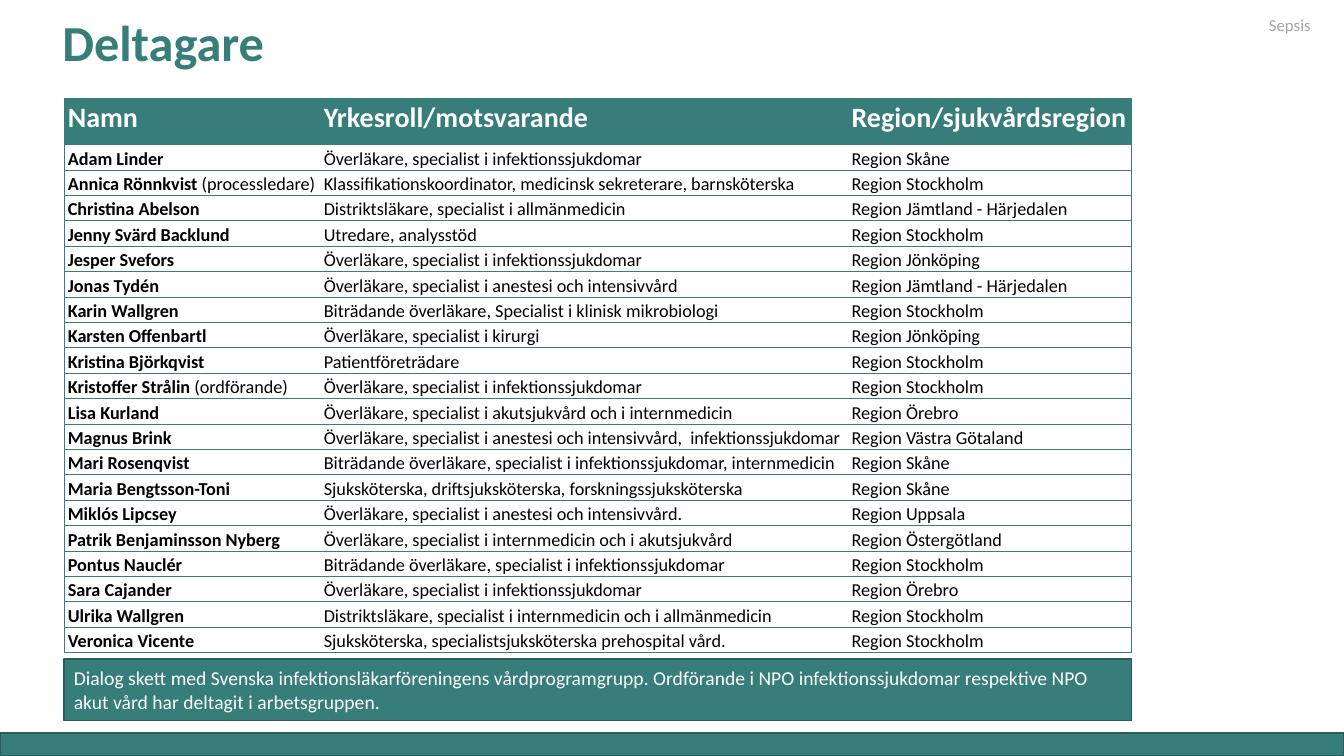
from lxml.etree import SubElement
from pptx import Presentation
from pptx.dml.color import RGBColor
from pptx.enum.shapes import MSO_SHAPE
from pptx.enum.text import MSO_ANCHOR, PP_ALIGN
from pptx.oxml.ns import qn
from pptx.util import Cm, Pt

TEAL = RGBColor(0x37, 0x7D, 0x7A)
DARK_TEAL = RGBColor(0x29, 0x5C, 0x5A)
BLACK = RGBColor(0, 0, 0)
WHITE = RGBColor(0xFF, 0xFF, 0xFF)
GREY = RGBColor(0xA6, 0xA6, 0xA6)
FONT = "Calibri"

HEADER = ("Namn", "Yrkesroll/motsvarande", "Region/sjukvårdsregion")
# name, role, region, optional assignment in the group
MEMBERS = [
    ("Adam Linder", "Överläkare, specialist i infektionssjukdomar", "Skåne"),
    ("Annica Rönnkvist", "Klassifikationskoordinator, medicinsk sekreterare, barnsköterska",
     "Stockholm", "processledare"),
    ("Christina Abelson", "Distriktsläkare, specialist i allmänmedicin", "Jämtland - Härjedalen"),
    ("Jenny Svärd Backlund", "Utredare, analysstöd", "Stockholm"),
    ("Jesper Svefors", "Överläkare, specialist i infektionssjukdomar", "Jönköping"),
    ("Jonas Tydén", "Överläkare, specialist i anestesi och intensivvård", "Jämtland - Härjedalen"),
    ("Karin Wallgren", "Biträdande överläkare, Specialist i klinisk mikrobiologi", "Stockholm"),
    ("Karsten Offenbartl", "Överläkare, specialist i kirurgi", "Jönköping"),
    ("Kristina Björkqvist", "Patientföreträdare", "Stockholm"),
    ("Kristoffer Strålin", "Överläkare, specialist i infektionssjukdomar", "Stockholm", "ordförande"),
    ("Lisa Kurland", "Överläkare, specialist i akutsjukvård och i internmedicin", "Örebro"),
    ("Magnus Brink", "Överläkare, specialist i anestesi och intensivvård,  infektionssjukdomar",
     "Västra Götaland"),
    ("Mari Rosenqvist", "Biträdande överläkare, specialist i infektionssjukdomar, internmedicin", "Skåne"),
    ("Maria Bengtsson-Toni", "Sjuksköterska, driftsjuksköterska, forskningssjuksköterska", "Skåne"),
    ("Miklós Lipcsey", "Överläkare, specialist i anestesi och intensivvård.", "Uppsala"),
    ("Patrik Benjaminsson Nyberg", "Överläkare, specialist i internmedicin och i akutsjukvård",
     "Östergötland"),
    ("Pontus Nauclér", "Biträdande överläkare, specialist i infektionssjukdomar", "Stockholm"),
    ("Sara Cajander", "Överläkare, specialist i infektionssjukdomar", "Örebro"),
    ("Ulrika Wallgren", "Distriktsläkare, specialist i internmedicin och i allmänmedicin", "Stockholm"),
    ("Veronica Vicente", "Sjuksköterska, specialistsjuksköterska prehospital vård.", "Stockholm"),
]
NOTE = ("Dialog skett med Svenska infektionsläkarföreningens vårdprogramgrupp. Ordförande i NPO "
        "infektionssjukdomar respektive NPO akut vård har deltagit i arbetsgruppen.")

LEFT, TABLE_TOP = 1.61, 2.48
COL_WIDTHS = (6.45, 13.3, 7.15)
HEADER_HEIGHT, ROW_HEIGHT = 1.16, 0.64


def write(tf, content, size=13, color=BLACK, bold=False, spacing=None):
    """Fill a text frame with a string or a list of (text, bold) runs."""
    p = tf.paragraphs[0]
    p.alignment = PP_ALIGN.LEFT
    p.line_spacing = spacing
    for text, is_bold in [(content, bold)] if isinstance(content, str) else content:
        r = p.add_run()
        r.text = text
        r.font.name, r.font.size, r.font.bold = FONT, Pt(size), is_bold
        r.font.color.rgb = color


def add_text(s, box, content, anchor=MSO_ANCHOR.TOP, **fmt):
    tf = s.shapes.add_textbox(*map(Cm, box)).text_frame
    tf.word_wrap = True
    tf.vertical_anchor = anchor
    write(tf, content, **fmt)


def add_panel(s, *box):
    sp = s.shapes.add_shape(MSO_SHAPE.RECTANGLE, *map(Cm, box))
    sp.shadow.inherit = False
    sp.fill.solid()
    sp.fill.fore_color.rgb = TEAL
    sp.line.color.rgb = DARK_TEAL
    sp.line.width = Pt(1)
    return sp


def set_borders(cell, visible):
    """Draw the named sides of a cell and clear the others."""
    tcPr = cell._tc.get_or_add_tcPr()
    for i, side in enumerate("LRTB"):
        ln = SubElement(tcPr, qn("a:ln" + side), w=str(Pt(0.5)))
        if side in visible:
            fill = SubElement(ln, qn("a:solidFill"))
            SubElement(fill, qn("a:srgbClr"), val=str(TEAL))
        else:
            SubElement(ln, qn("a:noFill"))
        tcPr.insert(i, ln)


def add_members_table(s):
    height = HEADER_HEIGHT + ROW_HEIGHT * len(MEMBERS)
    frame = s.shapes.add_table(len(MEMBERS) + 1, len(HEADER), Cm(LEFT), Cm(TABLE_TOP),
                               Cm(sum(COL_WIDTHS)), Cm(height))
    table = frame.table
    table.horz_banding = False
    for col, width in zip(table.columns, COL_WIDTHS):
        col.width = Cm(width)
    rows = [HEADER]
    for name, role, region, *duty in MEMBERS:
        name_runs = [(name + " ", True), (f"({duty[0]})", False)] if duty else [(name, True)]
        rows.append((name_runs, role, "Region " + region))
    for i, row in enumerate(rows):
        is_header = i == 0
        table.rows[i].height = Cm(HEADER_HEIGHT if is_header else ROW_HEIGHT)
        for j, content in enumerate(row):
            cell = table.cell(i, j)
            cell.margin_left = Cm(0.1)
            cell.margin_right = Cm(0.1 if is_header else 0)
            cell.margin_top = cell.margin_bottom = 0
            cell.fill.solid()
            cell.fill.fore_color.rgb = TEAL if is_header else WHITE
            set_borders(cell, "TB" + {0: "L", len(row) - 1: "R"}.get(j, ""))
            if is_header:
                write(cell.text_frame, content, size=20, color=WHITE, bold=True, spacing=1.06)
            else:
                write(cell.text_frame, content, spacing=1.15)


def main():
    prs = Presentation()
    prs.slide_width, prs.slide_height = Cm(33.87), Cm(19.05)
    s = prs.slides.add_slide(prs.slide_layouts[6])

    add_panel(s, 0, 18.47, 33.87, 0.58)
    add_text(s, (1.32, 0.1, 29.21, 2.08), "Deltagare", anchor=MSO_ANCHOR.MIDDLE,
             size=36, color=TEAL, bold=True, spacing=0.9)
    add_members_table(s)
    note = add_panel(s, LEFT, 16.61, sum(COL_WIDTHS), 1.55)
    note.text_frame.word_wrap = True
    write(note.text_frame, NOTE, size=14, color=WHITE)
    add_text(s, (31.73, 0.25, 2.13, 0.76), "Sepsis", size=12, color=GREY)

    prs.save("out.pptx")


if __name__ == "__main__":
    main()
